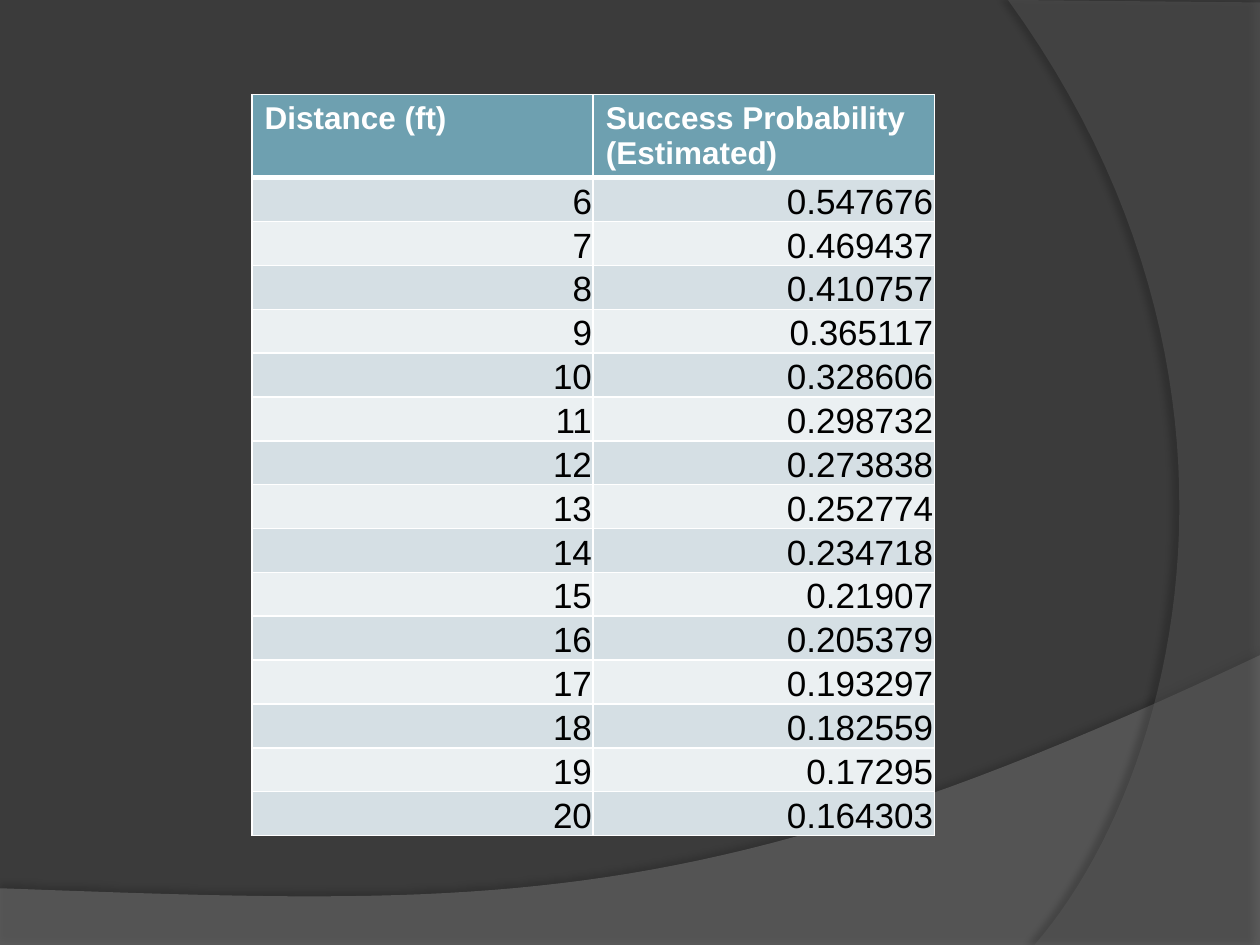
from pptx import Presentation, util as u
from pptx.dml.color import RGBColor
from pptx.enum import text
from pptx.oxml import parse_xml
from pptx.oxml.ns import nsdecls, qn

BACKGROUND = RGBColor(0x3B, 0x3B, 0x3B)
LOWER_WAVE = RGBColor(0x7F, 0x7F, 0x7F)
RIGHT_ARC = RGBColor(0x5E, 0x5E, 0x5E)
HEADER = RGBColor(0x6E, 0xA0, 0xB0)
BANDS = [RGBColor(0xD5, 0xDF, 0xE4), RGBColor(0xEB, 0xF0, 0xF2)]
WHITE = RGBColor(0xFF, 0xFF, 0xFF)
BLACK = RGBColor(0, 0, 0)

HEADINGS = ["Distance (ft)", "Success Probability (Estimated)"]
FIRST_DISTANCE = 6
PROBABILITIES = [
    "0.547676", "0.469437", "0.410757", "0.365117", "0.328606",
    "0.298732", "0.273838", "0.252774", "0.234718", "0.21907",
    "0.205379", "0.193297", "0.182559", "0.17295", "0.164303",
]


def curve(start, control1, control2, end, steps=48):
    """Points along a cubic Bezier curve."""
    points = []
    for step in range(steps + 1):
        t = step / steps
        weights = ((1 - t) ** 3, 3 * t * (1 - t) ** 2, 3 * t * t * (1 - t), t ** 3)
        corners = (start, control1, control2, end)
        points.append(tuple(sum(w * c[axis] for w, c in zip(weights, corners))
                            for axis in (0, 1)))
    return points


deck = Presentation()
deck.slide_width, deck.slide_height = u.Pt(720), u.Pt(540)
page = deck.slides.add_slide(deck.slide_layouts[6])
page.background.fill.solid()
page.background.fill.fore_color.rgb = BACKGROUND

# Translucent background waves: outline, colour, opacity, shadow settings
wave = curve((720, 374.4), (402.48, 524.88), (281.52, 517.68), (0, 507.6))
arc = curve((591.12, 540), (673.2, 445.68), (732.96, 216), (576, 0))
waves = [
    (wave + [(0, 540.72), (720, 540.72)], LOWER_WAVE, 45, (35, 4, 3.5, 270)),
    (arc + [(720, 1.44), (720, 540)], RIGHT_ARC, 40, (45, 4, 4, 180)),
]
for outline, colour, opacity, (strength, blur, distance, angle) in waves:
    points = [(u.Pt(x), u.Pt(y)) for x, y in outline]
    builder = page.shapes.build_freeform(*points[0])
    builder.add_line_segments(points[1:], close=True)
    shape = builder.convert_to_shape()
    shape.fill.solid()
    shape.fill.fore_color.rgb = colour
    fill_colour = shape.fill._xPr.find(qn("a:solidFill"))[0]
    fill_colour.append(parse_xml(f'<a:alpha {nsdecls("a")} val="{opacity * 1000}"/>'))
    shape.line.fill.background()
    shape.shadow.inherit = False
    shape._element.spPr.find(qn("a:effectLst")).append(parse_xml(
        f'<a:outerShdw {nsdecls("a")} blurRad="{u.Pt(blur)}" dist="{u.Pt(distance)}" '
        f'dir="{angle * 60000}" algn="ctr" rotWithShape="0"><a:srgbClr val="{BLACK}">'
        f'<a:alpha val="{strength * 1000}"/></a:srgbClr></a:outerShdw>'))

# Probability table
rows = [HEADINGS] + [[str(distance), probability] for distance, probability
                     in enumerate(PROBABILITIES, FIRST_DISTANCE)]
HEADER_HEIGHT, ROW_HEIGHT = 47.5, 25.06
table = page.shapes.add_table(
    len(rows), 2, u.Pt(144), u.Pt(54), u.Pt(390),
    u.Pt(HEADER_HEIGHT + ROW_HEIGHT * len(PROBABILITIES))).table
for column in table.columns:
    column.width = u.Pt(195)

for row_index, values in enumerate(rows):
    is_header = row_index == 0
    table.rows[row_index].height = u.Pt(HEADER_HEIGHT if is_header else ROW_HEIGHT)
    for column_index, value in enumerate(values):
        cell = table.cell(row_index, column_index)

        # White borders, thick between header and body
        properties = cell._tc.get_or_add_tcPr()
        for side in "LRTB":
            thick = (row_index, side) in [(0, "B"), (1, "T")]
            properties.append(parse_xml(
                f'<a:ln{side} {nsdecls("a")} w="{u.Pt(3 if thick else 1)}">'
                f'<a:solidFill><a:srgbClr val="{WHITE}"/></a:solidFill></a:ln{side}>'))
        cell.fill.solid()
        cell.fill.fore_color.rgb = HEADER if is_header else BANDS[(row_index - 1) % 2]

        para = cell.text_frame.paragraphs[0]
        if not is_header:
            cell.vertical_anchor = text.MSO_ANCHOR.BOTTOM
            cell.margin_left = cell.margin_right = cell.margin_top = u.Pt(0.75)
            cell.margin_bottom = 0
            para.alignment = text.PP_ALIGN.RIGHT
        span = para.add_run()
        span.text = value
        span.font.name = "Arial"
        span.font.size = u.Pt(18 if is_header else 20)
        span.font.bold = is_header
        span.font.color.rgb = WHITE if is_header else BLACK

deck.save("out.pptx")
